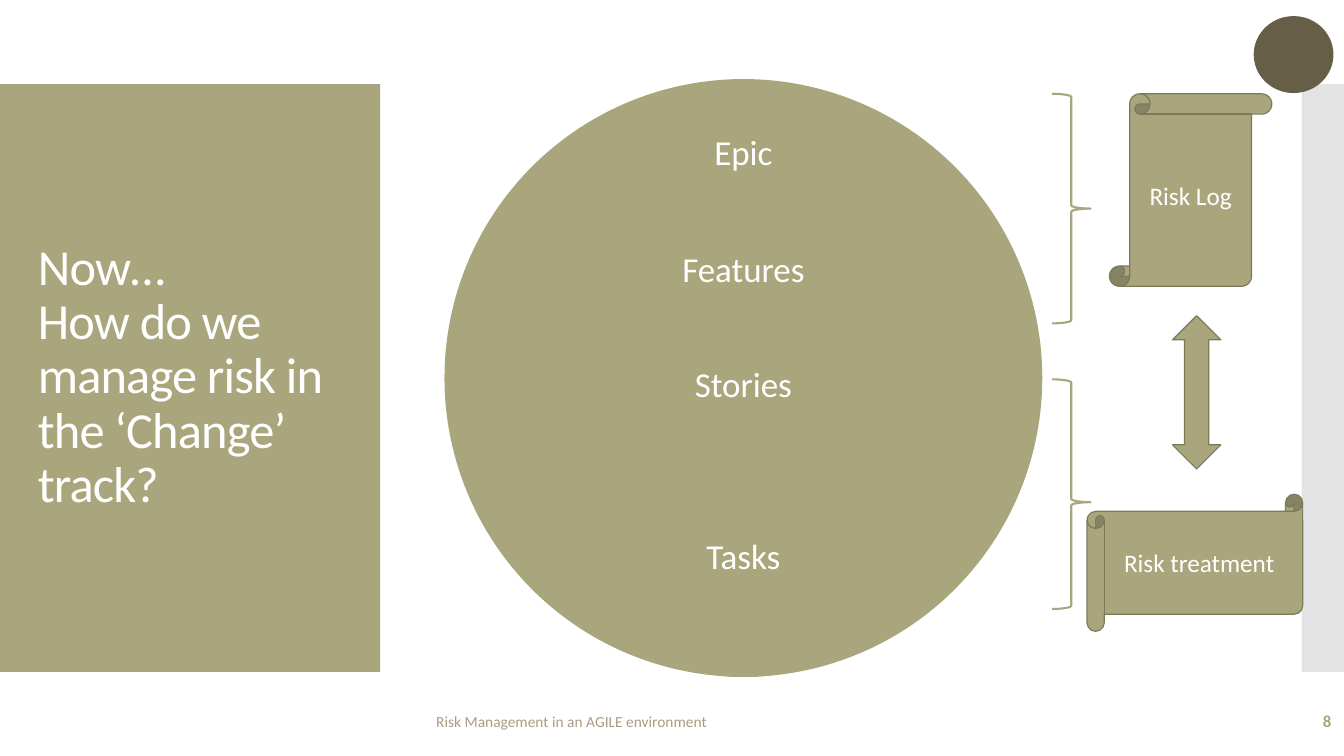
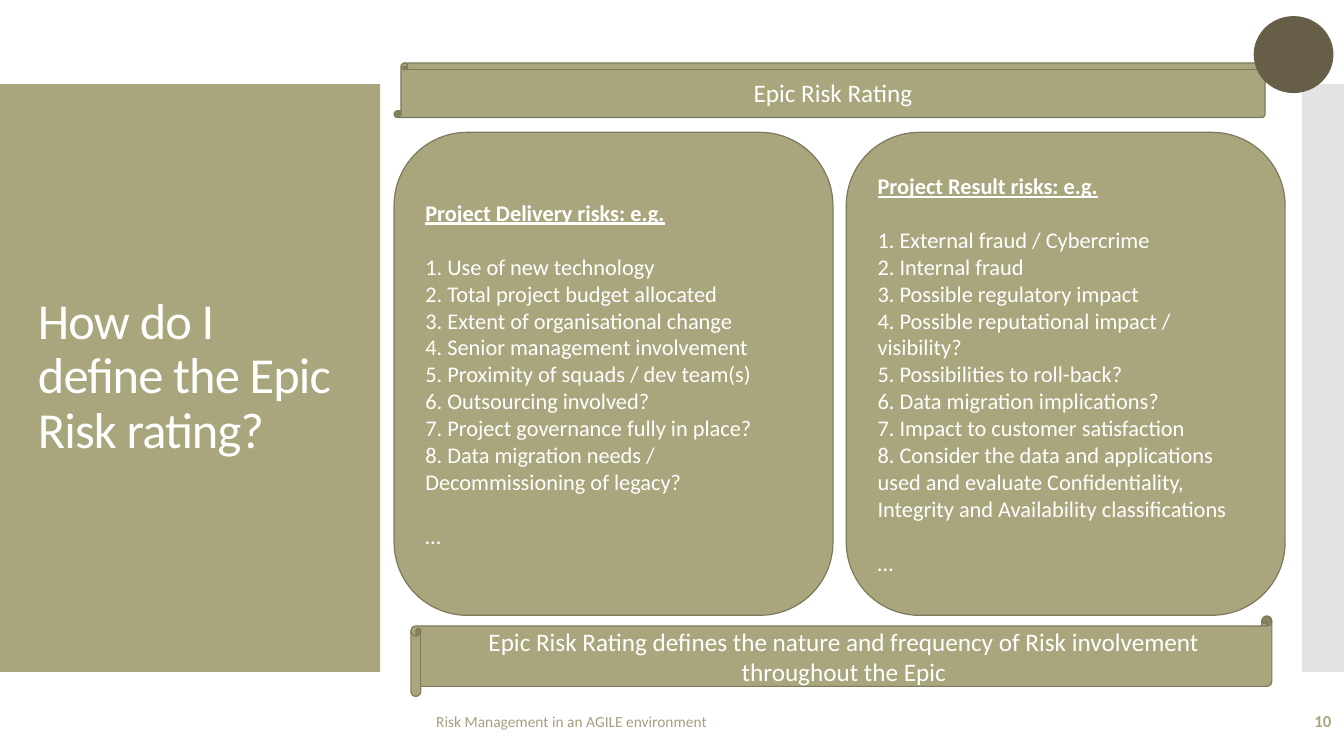
"""Build two slides on managing risk in an agile environment."""
from lxml.etree import SubElement
from pptx import Presentation
from pptx.dml.color import RGBColor
from pptx.enum.shapes import MSO_SHAPE as SHAPE
from pptx.enum.text import MSO_ANCHOR as ANCHOR, PP_ALIGN as ALIGN
from pptx.oxml.ns import qn
from pptx.util import Pt

FONT = "Calibri"
OLIVE, OUTLINE, BROWN = "A9A57C", "7D7A5C", "675E47"
GREY, TAN, WHITE = "C8C8C8", "A89D7F", "FFFFFF"
FOOTER = "Risk Management in an AGILE environment"

TRACK_TITLE = ["Now…", "How do we manage risk in the ‘Change’ track?"]
LEVELS = [("Epic", 110), ("Features", 193.5), ("Stories", 275.5), ("Tasks", 398.5)]
CENTRE_X, CIRCLE_BOTTOM, CIRCLE_SIZE = 531, 483.5, 427
TRACK_SHAPES = [
    (SHAPE.VERTICAL_SCROLL, (792.5, 67, 116, 137.5), "Risk Log"),
    (SHAPE.HORIZONTAL_SCROLL, (776.5, 353, 154, 98), "Risk treatment"),
    (SHAPE.UP_DOWN_ARROW, (837.5, 225.5, 34.5, 109.5), ""),
]
BRACES = [(67, 0.5), (271, 0.535)]

RATING_TITLE = ["How do I define the Epic Risk rating?"]
RATING_SCROLLS = [
    (SHAPE.VERTICAL_SCROLL, (281.5, 45, 627, 39), "Epic Risk Rating"),
    (SHAPE.HORIZONTAL_SCROLL, (293.5, 440, 615, 57.5),
     "Epic Risk Rating defines the nature and frequency of Risk involvement "
     "throughout the Epic"),
]
RISK_CARDS = [
    ("Project Delivery risks: e.g.", [
        "Use of new technology",
        "Total project budget allocated",
        "Extent of organisational change",
        "Senior management involvement",
        "Proximity of squads / dev team(s)",
        "Outsourcing involved?",
        "Project governance fully in place?",
        "Data migration needs / Decommissioning of legacy?",
    ]),
    ("Project Result risks: e.g.", [
        "External fraud / Cybercrime",
        "Internal fraud",
        "Possible regulatory impact",
        "Possible reputational impact / visibility?",
        "Possibilities to roll-back?",
        "Data migration implications?",
        "Impact to customer satisfaction",
        "Consider the data and applications used and evaluate Confidentiality, "
        "Integrity and Availability classifications",
    ]),
]
CARD_LEFT, CARD_TOP, CARD_W, CARD_H, CARD_GAP = 281.5, 94.5, 313.5, 345, 9.5
CARD_SPACE = 19.5


def rgb(value):
    """Turn a hex string into a colour."""
    return RGBColor.from_string(value)


def write(sp, lines, size, color=WHITE, align=ALIGN.LEFT, bold=False, spacing=None):
    """Fill a shape with one paragraph per line and return the paragraphs."""
    tf = sp.text_frame
    tf.word_wrap = True
    tf.vertical_anchor = ANCHOR.MIDDLE
    for i, line in enumerate(lines):
        p = tf.paragraphs[0] if i == 0 else tf.add_paragraph()
        p.text = line
        p.alignment = align
        p.line_spacing = spacing
        for r in p.runs:
            r.font.name, r.font.size, r.font.bold = FONT, Pt(size), bold
            r.font.color.rgb = rgb(color)
    return tf.paragraphs


def add_text(s, box, lines, size, **style):
    """Add a text box and return its paragraphs."""
    return write(s.shapes.add_textbox(*map(Pt, box)), lines, size, **style)


def add_shape(s, kind, box, fill=OLIVE, line=None, width=0.85):
    """Add a preset shape without a shadow."""
    sp = s.shapes.add_shape(kind, *map(Pt, box))
    sp.shadow.inherit = False
    if fill:
        sp.fill.solid()
        sp.fill.fore_color.rgb = rgb(fill)
    else:
        sp.fill.background()
    if line:
        sp.line.color.rgb = rgb(line)
        sp.line.width = Pt(width)
    else:
        sp.line.fill.background()
    return sp


def add_labelled(s, shapes):
    """Add outlined shapes with centred labels."""
    for kind, box, label in shapes:
        sp = add_shape(s, kind, box, line=OUTLINE)
        if label:
            write(sp, [label], 18, align=ALIGN.CENTER)


def start_slide(prs, title, number):
    """Add a slide with its panel, side band, title and footer."""
    s = prs.slides.add_slide(prs.slide_layouts[6])
    add_shape(s, SHAPE.RECTANGLE, (0, 60, 271.5, 420))
    band = add_shape(s, SHAPE.RECTANGLE, (930, 60, 30, 420), GREY)
    color = band.fill._xPr.find(qn("a:solidFill"))[0]
    SubElement(color, qn("a:alpha"), val="50000")
    for p in add_text(s, (20, 88.5, 232, 362.5), title, 36, spacing=0.9):
        for r in p.runs:
            r.font._element.set("spc", "-60")
    add_text(s, (304.5, 500.5, 465, 29), [FOOTER], 11, color=TAN)
    add_text(s, (838, 500.5, 120, 29), [str(number)], 12, color=OLIVE,
             align=ALIGN.RIGHT, bold=True)
    return s


def add_corner_dot(s):
    """Add the brown dot in the top right corner."""
    add_shape(s, SHAPE.OVAL, (895.5, 11.5, 57, 55), BROWN)


def build_track(prs):
    """Build the slide with nested work levels and risk documents."""
    s = start_slide(prs, TRACK_TITLE, 8)
    for i, (level, middle) in enumerate(LEVELS):
        d = CIRCLE_SIZE * (1 - 0.2 * i)
        add_shape(s, SHAPE.OVAL, (CENTRE_X - d / 2, CIRCLE_BOTTOM - d, d, d))
        add_text(s, (CENTRE_X - 60, middle - 30, 120, 60), [level], 25,
                 align=ALIGN.CENTER, spacing=0.9)
    add_labelled(s, TRACK_SHAPES)
    for top, point in BRACES:
        brace = add_shape(s, SHAPE.RIGHT_BRACE, (751.5, top, 27.5, 164), None, OLIVE, 1.5)
        brace.adjustments[1] = point
    add_corner_dot(s)


def build_rating(prs):
    """Build the slide with the two risk cards."""
    s = start_slide(prs, RATING_TITLE, 10)
    add_labelled(s, RATING_SCROLLS)
    for i, (heading, risks) in enumerate(RISK_CARDS):
        left = CARD_LEFT + i * (CARD_W + CARD_GAP)
        card = add_shape(s, SHAPE.ROUNDED_RECTANGLE,
                         (left, CARD_TOP, CARD_W, CARD_H), line=OUTLINE)
        items = [f"{n}. {risk}" for n, risk in enumerate(risks, 1)]
        paragraphs = write(card, [heading, *items, "…"], 16)
        font = paragraphs[0].runs[0].font
        font.bold = font.underline = True
        paragraphs[0].space_after = Pt(CARD_SPACE)
        paragraphs[-1].space_before = Pt(CARD_SPACE)
    add_corner_dot(s)


def main():
    """Build and save the presentation."""
    prs = Presentation()
    prs.slide_width, prs.slide_height = Pt(960), Pt(540)
    build_track(prs)
    build_rating(prs)
    prs.save("out.pptx")


if __name__ == "__main__":
    main()
